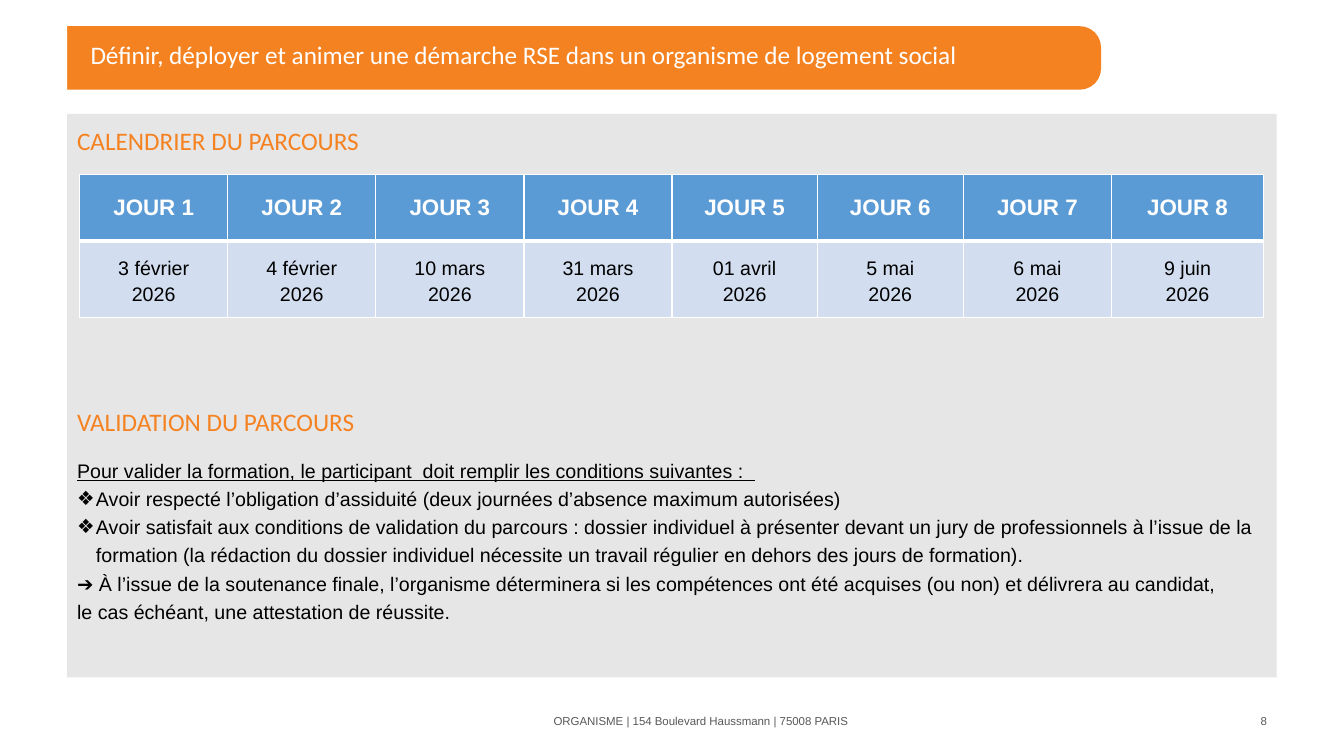
import pptx
import pptx.chart.data
import pptx.dml.color
import pptx.enum.shapes
import pptx.enum.text
import pptx.oxml
import pptx.oxml.ns
import pptx.util
from lxml import etree

Pt = pptx.util.Pt
ALIGN = pptx.enum.text.PP_ALIGN
ANCHOR = pptx.enum.text.MSO_ANCHOR
SHAPE = pptx.enum.shapes.MSO_SHAPE

COLORS = {
    "orange": "F58221",
    "panel": "E7E6E6",
    "header": "5B9BD5",
    "date": "D2DEEF",
    "footer": "58595B",
    "white": "FFFFFF",
    "black": "000000",
}
DATES = ["3 février\n2026", "4 février\n2026", "10 mars\n2026", "31 mars\v2026",
         "01 avril\n2026", "5 mai\n2026", "6 mai\n2026", "9 juin\v2026"]
COLUMN_WIDTHS = [105.8] * 4 + [103.7, 104.4, 105.8, 108.7]
ROW_HEIGHTS = [47.5, 54.7]
CONDITIONS = [
    "Avoir respecté l’obligation d’assiduité (deux journées d’absence maximum autorisées)",
    "Avoir satisfait aux conditions de validation du parcours : dossier individuel à présenter "
    "devant un jury de professionnels à l’issue de la formation (la rédaction du dossier "
    "individuel nécessite un travail régulier en dehors des jours de formation).",
]
CONCLUSION = ("➔ À l’issue de la soutenance finale, l’organisme déterminera si les compétences ont été "
              "acquises (ou non) et délivrera au candidat,\vle cas échéant, une attestation de réussite.")


def color(name):
    return pptx.dml.color.RGBColor.from_string(COLORS[name])


def add_child(parent, tag, **attributes):
    return etree.SubElement(parent, pptx.oxml.ns.qn(tag), attributes)


def write(frame, text, size=14, font="Arial", ink="black", bold=False, underline=False,
          align=ALIGN.LEFT, spacing=None, before=None, bullet=None, indent=13.5):
    """Append text to a frame: \\n starts a paragraph, \\v breaks a line."""
    for line in text.split("\n"):
        paragraph = frame.paragraphs[0]
        if paragraph.runs:
            paragraph = frame.add_paragraph()
        if bullet:
            properties = paragraph._p.get_or_add_pPr()
            properties.set("marL", str(Pt(indent)))
            properties.set("indent", str(-Pt(indent)))
            add_child(properties, "a:buFont", typeface=font)
            add_child(properties, "a:buChar", char=bullet)
        paragraph.alignment = align
        if spacing:
            paragraph.line_spacing = spacing
        if before:
            paragraph.space_before = Pt(before)
        for index, part in enumerate(line.split("\v")):
            if index:
                paragraph.add_line_break()
            run = paragraph.add_run()
            run.text = part
            run.font.size = Pt(size)
            run.font.name = font
            run.font.bold = bold
            run.font.underline = underline
            run.font.color.rgb = color(ink)


def set_borders(cell, **widths):
    """Draw white borders; must come before the cell's fill."""
    properties = cell._tc.get_or_add_tcPr()
    for side in "LRTB":
        line = add_child(properties, f"a:ln{side}", w=str(Pt(widths.get(side, 1))))
        fill = add_child(line, "a:solidFill")
        add_child(fill, "a:srgbClr", val=COLORS["white"])


class SlideBuilder:
    heading = {"size": 18, "font": "Calibri", "ink": "orange", "spacing": 1.2}
    footer = {"size": 8.2, "ink": "footer"}

    def __init__(self, slide):
        self.slide = slide

    def block(self, kind, left, top, width, height, fill):
        shape = self.slide.shapes.add_shape(kind, Pt(left), Pt(top), Pt(width), Pt(height))
        shape.shadow.inherit = False
        shape.fill.solid()
        shape.fill.fore_color.rgb = color(fill)
        shape.line.fill.background()
        shape.text_frame.vertical_anchor = ANCHOR.TOP
        return shape

    def text_box(self, left, top, width, height, anchor=ANCHOR.MIDDLE):
        box = self.slide.shapes.add_textbox(Pt(left), Pt(top), Pt(width), Pt(height))
        box.text_frame.word_wrap = True
        box.text_frame.vertical_anchor = anchor
        return box.text_frame

    def calendar(self, left, top):
        table = self.slide.shapes.add_table(
            2, len(DATES), Pt(left), Pt(top), Pt(sum(COLUMN_WIDTHS)), Pt(sum(ROW_HEIGHTS))).table
        table.horz_banding = False
        for row, height in zip(table.rows, ROW_HEIGHTS):
            row.height = Pt(height)
        for index, (date, width) in enumerate(zip(DATES, COLUMN_WIDTHS)):
            table.columns[index].width = Pt(width)
            day_cell, date_cell = table.cell(0, index), table.cell(1, index)
            set_borders(day_cell, B=3)
            set_borders(date_cell, T=3)
            for cell, fill in ((day_cell, "header"), (date_cell, "date")):
                cell.fill.solid()
                cell.fill.fore_color.rgb = color(fill)
                cell.vertical_anchor = ANCHOR.MIDDLE
            write(day_cell.text_frame, f"JOUR {index + 1}", size=16, ink="white",
                  bold=True, align=ALIGN.CENTER)
            write(date_cell.text_frame, date, align=ALIGN.CENTER, spacing=1.2)


def main():
    presentation = pptx.Presentation()
    presentation.slide_width, presentation.slide_height = Pt(960), Pt(540)
    builder = SlideBuilder(presentation.slides.add_slide(presentation.slide_layouts[6]))

    banner = builder.block(SHAPE.ROUNDED_RECTANGLE, 6.5, 18.7, 780, 45.4, "orange")
    banner.adjustments[0] = 0.336
    builder.block(SHAPE.RECTANGLE, 0, 10.8, 48, 63.4, "white")
    panel = builder.block(SHAPE.RECTANGLE, 48, 81.4, 864, 402.5, "panel")
    write(panel.text_frame, "CALENDRIER DU PARCOURS", **builder.heading)

    write(builder.text_box(318.2, 500.4, 365, 28.8),
          "ORGANISME | 154 Boulevard Haussmann | 75008 PARIS",
          align=ALIGN.CENTER, **builder.footer)
    write(builder.text_box(696, 500.4, 216, 28.8), "8", align=ALIGN.RIGHT, **builder.footer)
    write(builder.text_box(57.6, 18.7, 712.8, 43.2),
          "Définir, déployer et animer une démarche RSE dans un organisme de logement social",
          size=18, font="Calibri", ink="white", spacing=0.9)

    validation = builder.text_box(48, 282.2, 864, 185.8, ANCHOR.TOP)
    write(validation, "VALIDATION DU PARCOURS", **builder.heading)
    write(validation,
          "Pour valider la formation, le participant  doit remplir les conditions suivantes :  ",
          underline=True, before=16)
    for condition in CONDITIONS:
        write(validation, condition, spacing=1.2, bullet="❖")
    write(validation, CONCLUSION, spacing=1.2)

    builder.calendar(56.9, 124.6)
    presentation.save("out.pptx")


if __name__ == "__main__":
    main()
